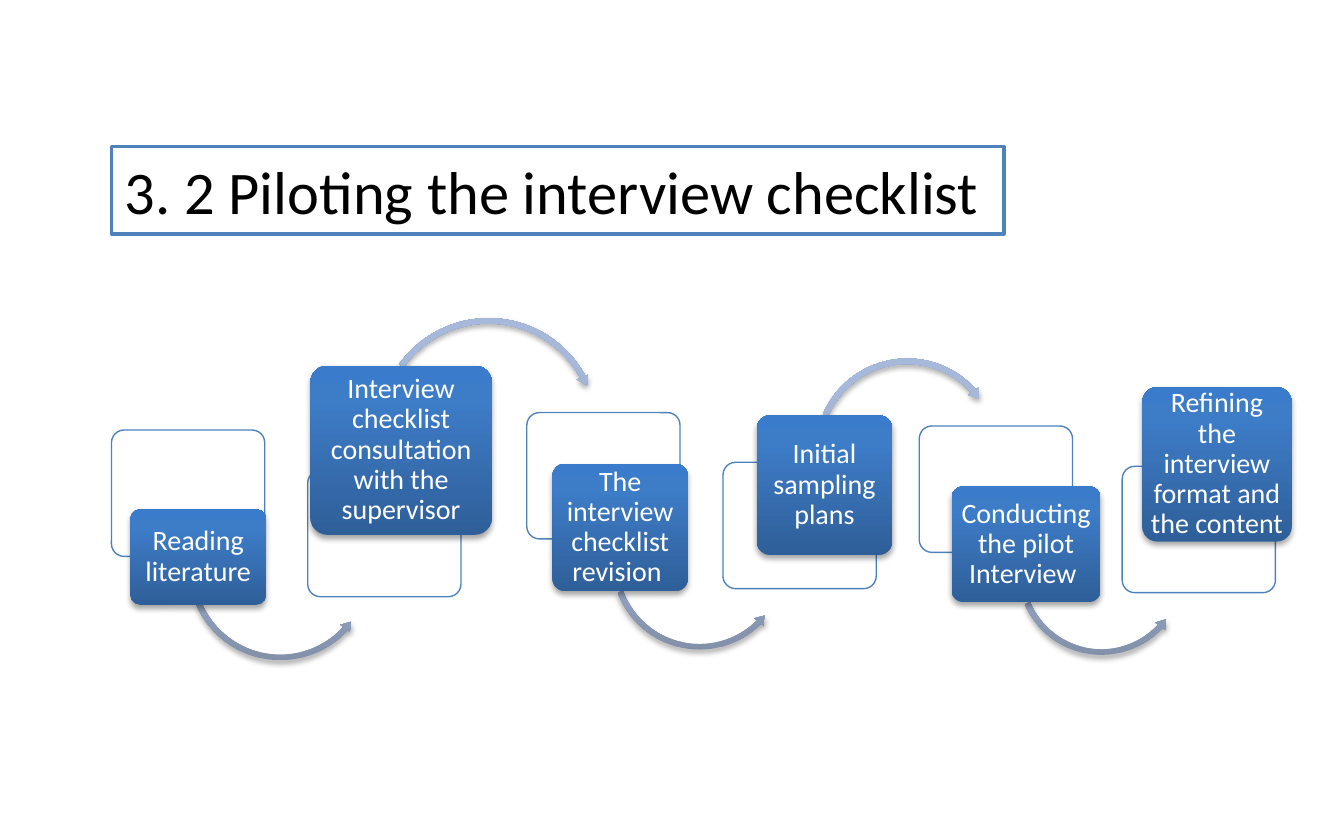
import pptx
import pptx.util
import pptx.oxml
import pptx.oxml.ns
import pptx.dml.color
import pptx.enum.shapes
import pptx.enum.text

kinds = pptx.enum.shapes.MSO_SHAPE
align = pptx.enum.text.PP_ALIGN
middle = pptx.enum.text.MSO_ANCHOR.MIDDLE
Pt, Inches = pptx.util.Pt, pptx.util.Inches
rgb = pptx.dml.color.RGBColor.from_string

theme = {
    "font": "Calibri", "title": 32.4, "body": 15,
    "ink": "000000", "paper": "FFFFFF", "edge": "4F81BD",
    "card": ["2F5F99", "3D7CC7", "3A7CCB"],
    "arrow": ["818FA8", "A7B9DA", "A7BADC"],
}

deck = pptx.Presentation()
deck.slide_width, deck.slide_height = Inches(10), Inches(6.25)
cell = deck.slide_width / 100  # square grid, 100 columns across the slide
slide = deck.slides.add_slide(deck.slide_layouts[5])


def shade(shape, hues):
    """Give a shape an upright gradient, no outline and a soft shadow."""
    shape.fill.background()
    shape.line.fill.background()
    ns = pptx.oxml.ns.nsdecls("a")
    stops = "".join(f'<a:gs pos="{pos}"><a:srgbClr val="{hue}"/></a:gs>'
                    for pos, hue in zip((0, 80000, 100000), hues))
    props = shape._element.spPr
    props.replace(props.find(pptx.oxml.ns.qn("a:noFill")), pptx.oxml.parse_xml(
        f'<a:gradFill {ns} rotWithShape="1"><a:gsLst>{stops}</a:gsLst>'
        '<a:lin ang="16200000" scaled="0"/></a:gradFill>'))
    props.append(pptx.oxml.parse_xml(
        f'<a:effectLst {ns}><a:outerShdw blurRad="40000" dist="23000" dir="5400000" '
        'rotWithShape="0"><a:srgbClr val="000000"><a:alpha val="35000"/></a:srgbClr>'
        '</a:outerShdw></a:effectLst>'))


def write(shape, text, size, hue, side, frame):
    """Set the text of a shape and its frame, paragraph and font formats."""
    shape.text_frame.text = text
    para = shape.text_frame.paragraphs[0]
    para.font.color.rgb = rgb(hue)
    for part, form in (
            (shape.text_frame, {"word_wrap": True, "vertical_anchor": middle, **frame}),
            (para, {"alignment": side}),
            (para.font, {"name": theme["font"], "size": Pt(size)})):
        for key, value in form.items():
            setattr(part, key, value)


# Title in its outlined box
title = slide.shapes.title
for key, value in zip(("left", "top", "width", "height"), (8.3, 10.9, 66.4, 6.5)):
    setattr(title, key, round(value * cell))
title.fill.solid()
title.fill.fore_color.rgb = rgb(theme["paper"])
title.line.color.rgb = rgb(theme["edge"])
title.line.width = Pt(2)
write(title, "3. 2 Piloting the interview checklist", theme["title"], theme["ink"],
      align.LEFT, {"auto_size": pptx.enum.text.MSO_AUTO_SIZE.NONE})

# Steps: text, frame corner, card box, arrow (corner, side, shape values), in cells
steps = [
    ("Reading literature", (8.3, 32), (9.7, 37.9, 10.1, 7.1),
     (13.8, 35.3, 14.1, (0.029, 3.57, 25.43, 94.35, 0.034))),
    ("Interview checklist consultation with the supervisor", (22.9, 35),
     (23.1, 27.2, 13.5, 12.6),
     (27.9, 23.4, 16.9, (0.024, 2.95, 198.92, 129.39, 0.028))),
    ("The interview checklist revision ", (39.2, 30.7), (41.1, 34.5, 10.1, 9.5),
     (45.3, 35.1, 13.5, (0.03, 3.73, 27.08, 95.83, 0.035))),
    ("Initial sampling plans", (53.8, 34.4), (56.3, 30.9, 10.1, 10.4),
     (60.4, 26.4, 14.2, (0.029, 3.55, 190.99, 122.05, 0.034))),
    ("Conducting the pilot Interview ", (68.4, 31.7), (70.8, 36.2, 11.1, 8.6),
     (75.5, 36.1, 12.9, (0.032, 3.95, 25.66, 94.2, 0.037))),
    ("Refining the interview format and the content", (83.5, 34.7),
     (85, 28.8, 11.1, 11.5), None),
]
turns = (kinds.LEFT_CIRCULAR_ARROW, kinds.CIRCULAR_ARROW)
pad = {"margin_left": Inches(0.03), "margin_right": Inches(0.03),
       "margin_top": Inches(0.02), "margin_bottom": Inches(0.02)}

for num, (text, spot, box, bend) in enumerate(steps):
    # Pale frame behind the card
    frame = slide.shapes.add_shape(
        kinds.ROUNDED_RECTANGLE, *(round(n * cell) for n in (*spot, 11.4, 9.4)))
    frame.adjustments[0] = 0.1
    frame.shadow.inherit = False
    frame.fill.solid()
    frame.fill.fore_color.rgb = rgb(theme["paper"])
    tint = frame._element.spPr.find(".//" + pptx.oxml.ns.qn("a:srgbClr"))
    tint.append(pptx.oxml.parse_xml(
        f'<a:alpha {pptx.oxml.ns.nsdecls("a")} val="90000"/>'))
    frame.line.color.rgb = rgb(theme["edge"])
    frame.line.width = Pt(0.75)

    # Arrow to the next step, below and above by turns
    if bend:
        left, top, side, values = bend
        arrow = slide.shapes.add_shape(
            turns[num % 2], *(round(n * cell) for n in (left, top, side, side)))
        for spot, value in enumerate(values):
            arrow.adjustments[spot] = value
        shade(arrow, theme["arrow"])

    # Card with the step's name
    card = slide.shapes.add_shape(
        kinds.ROUNDED_RECTANGLE, *(round(n * cell) for n in box))
    card.adjustments[0] = 0.1
    shade(card, theme["card"])
    write(card, text, theme["body"], theme["paper"], align.CENTER, pad)
    card.text_frame.paragraphs[0].line_spacing = 0.9

deck.save("out.pptx")
